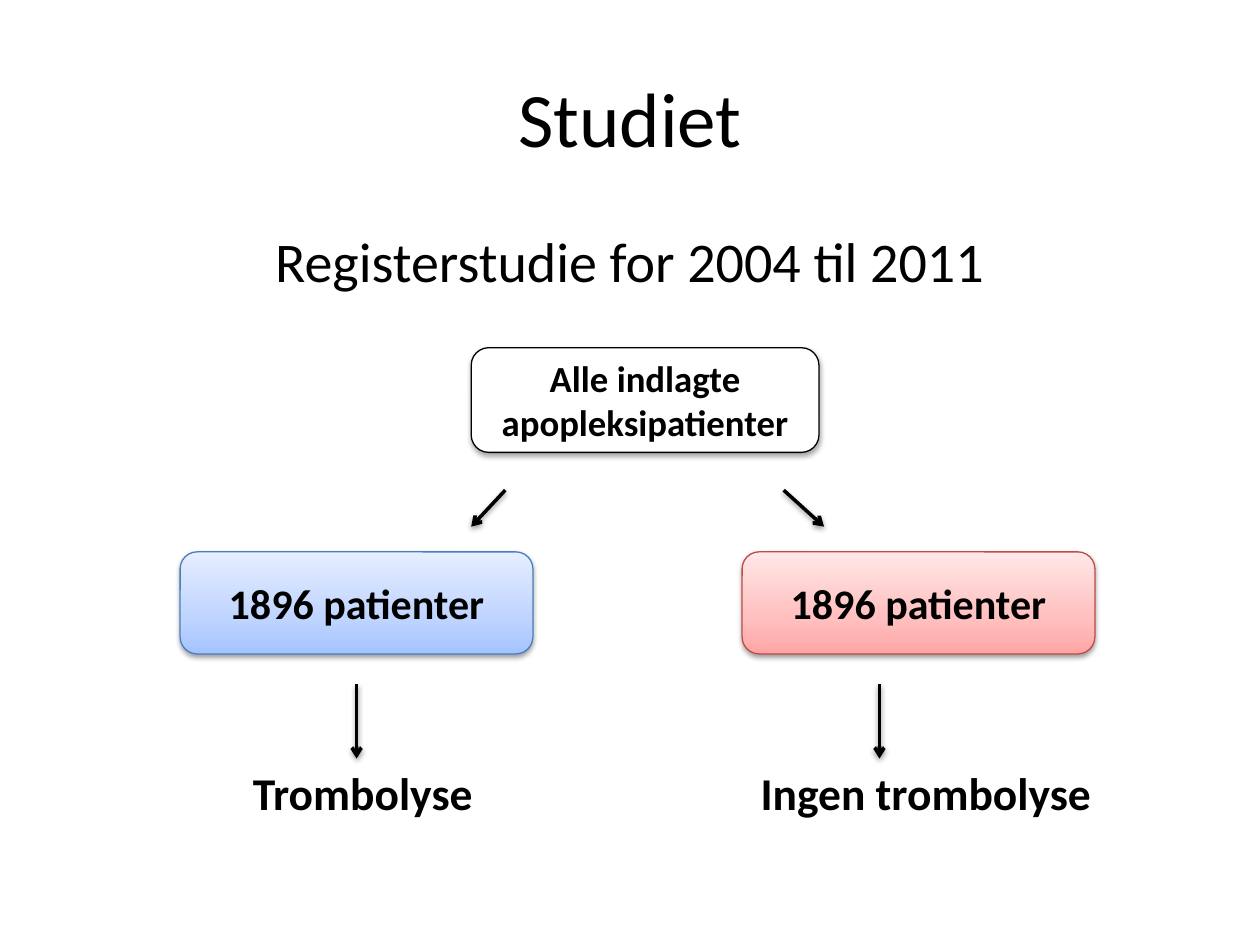
import copy
import lxml.etree
import pptx
import pptx.dml.color
import pptx.enum.shapes
import pptx.enum.text
import pptx.oxml
import pptx.oxml.ns
import pptx.util

RGB = pptx.dml.color.RGBColor.from_string
SHAPES = pptx.enum.shapes
TEXT = pptx.enum.text
qn = pptx.oxml.ns.qn

THEME = {
    "font": "Calibri", "ink": "000000", "paper": "FFFFFF",
    "title": 44, "subtitle": 32, "label": 26, "group": 24, "source": 21,
    "blue": ("A4C4FF", "BFD4FF", "E6EEFF"), "blue line": "4B7EBC",
    "red": ("FFA6A5", "FFC0BF", "FFE7E7"), "red line": "BF4C48",
    "stops": (0, 0.35, 1), "border": 0.75, "arrow": 2,
}

deck = pptx.Presentation()
deck.slide_width = pptx.util.Inches(10)
deck.slide_height = pptx.util.Inches(7.5)
page = deck.slides.add_slide(deck.slide_layouts[5])


def share(*values):
    """Turn alternating x and y percentages of the slide into lengths."""
    sides = (deck.slide_width, deck.slide_height)
    return [round(sides[i % 2] * value / 100) for i, value in enumerate(values)]


def write(box, words, size, anchor, bold=True):
    frame = box.text_frame
    frame.word_wrap = True
    frame.vertical_anchor = anchor
    para = frame.paragraphs[0]
    para.text = words
    para.alignment = TEXT.PP_ALIGN.CENTER
    para.font.name = THEME["font"]
    para.font.size = pptx.util.Pt(THEME[size])
    para.font.bold = bold
    para.font.color.rgb = RGB(THEME["ink"])


TOP, MIDDLE = TEXT.MSO_ANCHOR.TOP, TEXT.MSO_ANCHOR.MIDDLE

# Headings
title = page.shapes.title
title.left, title.top, title.width, title.height = share(5, 4, 90, 16.67)
write(title, "Studiet", "title", MIDDLE, bold=False)
subtitle = page.shapes.add_textbox(*share(5, 23.33, 90, 9))
write(subtitle, "Registerstudie for 2004 til 2011", "subtitle", TOP, bold=False)

# Rounded boxes: place, words, size, fill, border, shadow strength
shadowed = []
for place, words, size, fill, border, strength in (
    ((58.9, 58.4, 28, 10.8), "1896 patienter", "group", "red", "red line", 38),
    ((14.3, 58.4, 28, 10.8), "1896 patienter", "group", "blue", "blue line", 38),
    ((37.4, 36.8, 27.6, 11.07), "Alle indlagte apopleksipatienter", "source",
     "paper", "ink", 35),
):
    box = page.shapes.add_shape(SHAPES.MSO_SHAPE.ROUNDED_RECTANGLE, *share(*place))
    if fill == "paper":
        box.fill.solid()
        box.fill.fore_color.rgb = RGB(THEME[fill])
    else:
        box.fill.gradient()
        box.fill.gradient_angle = 90
        stop_list = box.element.spPr.find(".//" + qn("a:gsLst"))
        stop_list.append(copy.deepcopy(stop_list[-1]))
        for stop, position, color in zip(box.fill.gradient_stops, THEME["stops"], THEME[fill]):
            stop.position = position
            stop.color.rgb = RGB(color)
    box.line.color.rgb = RGB(THEME[border])
    box.line.width = pptx.util.Pt(THEME["border"])
    write(box, words, size, MIDDLE)
    box.shadow.inherit = False
    shadowed.append((box, strength))

# Arrows, from start to end
for ends in (
    (28.3, 72.4, 28.3, 80.27),
    (69.8, 72.4, 69.8, 80.27),
    (40.1, 51.87, 37.4, 55.73),
    (62.2, 51.87, 65.4, 55.73),
):
    arrow = page.shapes.add_connector(SHAPES.MSO_CONNECTOR.STRAIGHT, *share(*ends))
    arrow.line.color.rgb = RGB(THEME["ink"])
    arrow.line.width = pptx.util.Pt(THEME["arrow"])
    line = arrow.element.spPr.find(qn("a:ln"))
    lxml.etree.SubElement(line, qn("a:tailEnd"), type="arrow")
    lxml.etree.SubElement(arrow.element.spPr, qn("a:effectLst"))
    shadowed.append((arrow, 38))

# Soft shadow straight below every box and arrow
for shape, strength in shadowed:
    effects = shape.element.spPr.find(qn("a:effectLst"))
    shadow = lxml.etree.SubElement(
        effects, qn("a:outerShdw"), blurRad=str(pptx.util.Pt(3.1)),
        dist=str(pptx.util.Pt(1.6)), dir="5400000", rotWithShape="0")
    color = lxml.etree.SubElement(shadow, qn("a:srgbClr"), val=THEME["ink"])
    lxml.etree.SubElement(color, qn("a:alpha"), val=str(strength * 1000))

# Treatment labels, centred under the groups
label_width = 32
for center, words in ((28.8, "Trombolyse"), (73.5, "Ingen trombolyse")):
    label = page.shapes.add_textbox(*share(center - label_width / 2, 80.27, label_width, 8))
    write(label, words, "label", TOP)

deck.save("out.pptx")
